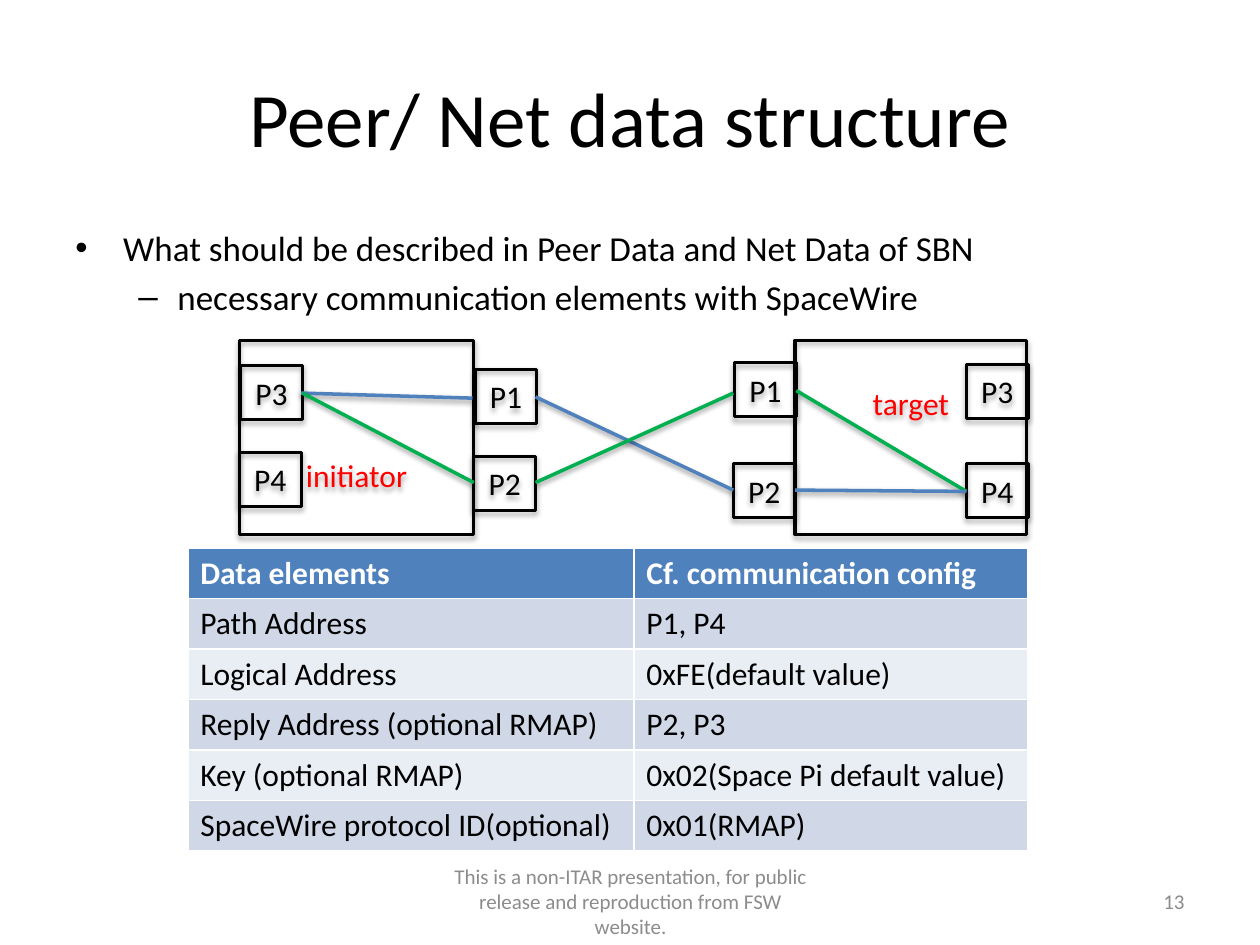
from lxml import etree
from pptx import Presentation
from pptx.dml.color import RGBColor
from pptx.enum.shapes import MSO_CONNECTOR, MSO_SHAPE
from pptx.enum.text import MSO_ANCHOR, PP_ALIGN
from pptx.oxml.ns import qn
from pptx.util import Inches, Pt

RECT = MSO_SHAPE.RECTANGLE
LINE = MSO_CONNECTOR.STRAIGHT
TOP, MID = MSO_ANCHOR.TOP, MSO_ANCHOR.MIDDLE
LEFT, MIDST, RIGHT = PP_ALIGN.LEFT, PP_ALIGN.CENTER, PP_ALIGN.RIGHT

HUES = {
    "ink": "000000", "red": "FF0000", "gray": "8C8C8C", "blue": "4F81BD",
    "green": "00B050", "white": "FFFFFF", "odd": "D0D8E8", "even": "E9EDF4",
}


def hue(name):
    return RGBColor.from_string(HUES[name])


class Deck:
    face = "Calibri"

    def __init__(self):
        self.show = Presentation()
        self.show.slide_width, self.show.slide_height = Inches(10), Inches(7.5)
        self.slide = self.show.slides.add_slide(self.show.slide_layouts[5])

    def label(self, para, text, size, color="ink", bold=False, align=LEFT):
        para.text = text
        para.alignment = align
        for key, val in {"name": self.face, "size": Pt(size), "bold": bold}.items():
            setattr(para.font, key, val)
        para.font.color.rgb = hue(color)

    def frame(self, shape, anchor):
        shape.text_frame.word_wrap = True
        shape.text_frame.vertical_anchor = anchor
        return shape.text_frame

    def title(self, text, *area):
        shape = self.slide.shapes.title
        for key, val in zip(("left", "top", "width", "height"), area):
            setattr(shape, key, Inches(val))
        self.label(self.frame(shape, MID).paragraphs[0], text, 44, align=MIDST)

    def note(self, text, align, *area):
        box = self.slide.shapes.add_textbox(*map(Inches, area))
        self.label(self.frame(box, MID).paragraphs[0], text, 12, "gray", align=align)

    def list(self, items, *area):
        box = self.slide.shapes.add_textbox(*map(Inches, area))
        body = self.frame(box, TOP)
        for i, (text, mark, left, hang) in enumerate(items):
            para = body.paragraphs[0] if i == 0 else body.add_paragraph()
            props = para._p.get_or_add_pPr()
            props.set("marL", str(Inches(left)))
            props.set("indent", str(-Inches(hang)))
            font = etree.SubElement(props, qn("a:buFont"))
            font.set("typeface", "Arial")
            etree.SubElement(props, qn("a:buChar")).set("char", mark)
            para.level = i
            if i:
                para.space_before = Pt(4)
            self.label(para, text, 20)

    def shade(self, shape, alpha, gap):
        props = shape._element.spPr
        root = props.find(qn("a:effectLst"))
        if root is None:
            root = etree.SubElement(props, qn("a:effectLst"))
        cast = etree.SubElement(root, qn("a:outerShdw"))
        marks = {"blurRad": Pt(3.1), "dist": Pt(gap), "dir": 5400000, "rotWithShape": 0}
        for key, val in marks.items():
            cast.set(key, str(val))
        tone = etree.SubElement(cast, qn("a:srgbClr"))
        tone.set("val", HUES["ink"])
        etree.SubElement(tone, qn("a:alpha")).set("val", str(alpha * 1000))

    def box(self, group, text, area, color="ink", anchor=MID, inset=0.05):
        shape = group.shapes.add_shape(RECT, *map(Inches, area))
        shape.fill.background()
        shape.line.color.rgb = hue("ink")
        shape.line.width = Pt(1.75)
        shape.shadow.inherit = False
        self.shade(shape, 35, 1.8)
        body = self.frame(shape, anchor)
        body.margin_top = Inches(inset)
        self.label(body.paragraphs[0], text, 18, color, align=MIDST)

    def node(self, name, area, anchor, inset, ports):
        group = self.slide.shapes.add_group_shape()
        self.box(group, name, area, "red", anchor, inset)
        for port, (x, y) in ports.items():
            self.box(group, port, (x, y, 0.49, 0.43))

    def link(self, color, *ends):
        line = self.slide.shapes.add_connector(LINE, *map(Inches, ends))
        line.line.color.rgb = hue(color)
        line.line.width = Pt(2)
        self.shade(line, 38, 1.6)

    def table(self, rows, left, top, cols, high):
        grid = self.slide.shapes.add_table(
            len(rows), len(cols), Inches(left), Inches(top),
            Inches(sum(cols)), Inches(high * len(rows))).table
        for col, wide in zip(grid.columns, cols):
            col.width = Inches(wide)
        for i, row in enumerate(rows):
            fill = "blue" if i == 0 else ("even", "odd")[i % 2]
            for j, text in enumerate(row):
                cell = grid.cell(i, j)
                cell.fill.solid()
                cell.fill.fore_color.rgb = hue(fill)
                self.label(cell.text_frame.paragraphs[0], text, 18,
                           "ink" if i else "white", i == 0)


def main():
    deck = Deck()
    deck.title("Peer/ Net data structure", 0.5, 0.3, 9, 1.25)
    deck.list([
        ("What should be described in Peer Data and Net Data of SBN", "•", 0.38, 0.38),
        ("necessary communication elements with SpaceWire", "–", 0.81, 0.31),
    ], 0.5, 1.75, 9, 0.9)
    deck.note("This is a non-ITAR presentation, for public release and "
              "reproduction from FSW website.", MIDST, 3.42, 6.95, 3.17, 0.4)
    deck.note("13", RIGHT, 7.17, 6.95, 2.33, 0.4)

    deck.node("initiator", (1.9, 2.7, 1.86, 1.54), MID, 0.65, {
        "P2": (3.76, 3.62), "P1": (3.77, 2.93),
        "P4": (1.9, 3.59), "P3": (1.91, 2.9)})
    deck.node("target", (6.31, 2.7, 1.84, 1.54), TOP, 0.35, {
        "P2": (5.82, 3.68), "P1": (5.83, 2.88),
        "P4": (7.67, 3.68), "P3": (7.67, 2.89)})
    for link in [
        ("blue", 4.25, 3.15, 5.82, 3.89),
        ("green", 4.25, 3.83, 5.82, 3.12),
        ("blue", 2.39, 3.12, 3.75, 3.16),
        ("green", 2.4, 3.12, 3.76, 3.83),
        ("green", 6.32, 3.1, 7.67, 3.9),
        ("blue", 6.31, 3.89, 7.67, 3.9),
    ]:
        deck.link(*link)

    deck.table([
        ("Data elements", "Cf. communication config"),
        ("Path Address", "P1, P4"),
        ("Logical Address", "0xFE(default value)"),
        ("Reply Address (optional RMAP)", "P2, P3"),
        ("Key (optional RMAP)", "0x02(Space Pi default value)"),
        ("SpaceWire protocol ID(optional)", "0x01(RMAP)"),
    ], 1.49, 4.35, (3.54, 3.13), 0.4)
    deck.show.save("out.pptx")


if __name__ == "__main__":
    main()
